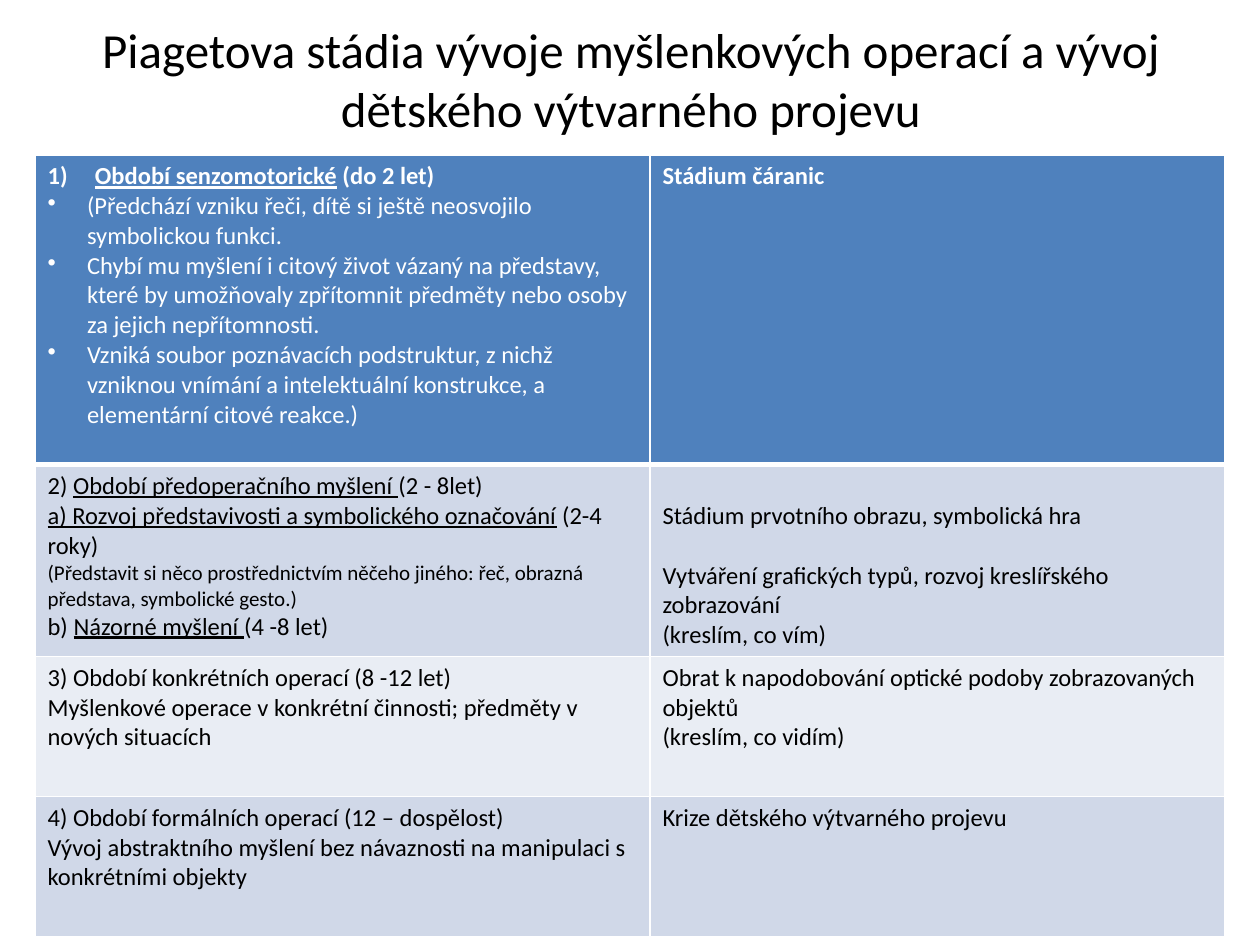
from lxml import etree
from pptx import Presentation
from pptx.dml.color import RGBColor
from pptx.enum.text import MSO_ANCHOR, PP_ALIGN
from pptx.oxml.ns import qn
from pptx.util import Pt

HUES = {"head": "4F81BD", "dark": "D0D8E8", "light": "E9EDF4", "white": "FFFFFF", "black": "000000"}
BASE = {"name": "Calibri", "size": Pt(14), "bold": False, "underline": False}
BOLD = {"bold": True}
LINE = {"underline": True}
BOTH = {**BOLD, **LINE}
SMALL = {"size": Pt(12)}
WIDTHS = [351.4, 328.6]
BULLETS = {
    "number": (27, "buAutoNum", {"type": "arabicParenR"}),
    "dot": (22.5, "buChar", {"char": "•"}),
}

ROWS = [
    (177, "head", "white", [
        [
            ("number", [("Období senzomotorické", BOTH), (" (do 2 let)", BOLD)]),
            ("dot", [("(Předchází vzniku řeči, dítě si ještě neosvojilo symbolickou funkci.", {})]),
            ("dot", [("Chybí mu myšlení i citový život vázaný na představy, které by umožňovaly "
                      "zpřítomnit předměty nebo osoby za jejich nepřítomnosti.", {})]),
            ("dot", [("Vzniká soubor poznávacích podstruktur, z nichž vzniknou vnímání a "
                      "intelektuální konstrukce, a elementární citové reakce.)", {})]),
        ],
        [(None, [("Stádium čáranic", BOLD)])],
    ]),
    (109.7, "dark", "black", [
        [
            (None, [("2) ", {}), ("Období předoperačního myšlení ", LINE), ("(2 - 8let)", {})]),
            (None, [("a) Rozvoj představivosti a symbolického označování", LINE), (" (2-4 roky)", {})]),
            (None, [("(Představit si něco prostřednictvím něčeho jiného: řeč, obrazná představa, "
                     "symbolické gesto.)", SMALL)]),
            (None, [("b) ", {}), ("Názorné myšlení ", LINE), ("(4 -8 let)", {})]),
        ],
        [
            (None, [("Stádium prvotního obrazu, symbolická hra", {})]),
            ("gap", [("Vytváření grafických typů, rozvoj kreslířského zobrazování", {})]),
            (None, [("(kreslím, co vím)", {})]),
        ],
    ]),
    (80, "light", "black", [
        [
            (None, [("3) Období konkrétních operací (8 -12 let)", {})]),
            (None, [("Myšlenkové operace v konkrétní činnosti; předměty v nových situacích", {})]),
        ],
        [
            (None, [("Obrat k napodobování optické podoby zobrazovaných objektů", {})]),
            (None, [("(kreslím, co vidím)", {})]),
        ],
    ]),
    (80, "dark", "black", [
        [
            (None, [("4) Období formálních operací (12 – dospělost)", {})]),
            (None, [("Vývoj abstraktního myšlení bez návaznosti na manipulaci s konkrétními objekty", {})]),
        ],
        [(None, [("Krize dětského výtvarného projevu", {})])],
    ]),
]


def add_run(para, text, form, hue):
    run = para.add_run()
    run.text = text
    for key, value in {**BASE, **form}.items():
        setattr(run.font, key, value)
    run.font.color.rgb = RGBColor.from_string(HUES[hue])


def add_edge(cell, side, width):
    edge = etree.SubElement(cell._tc.get_or_add_tcPr(), qn(f"a:ln{side}"), w=str(Pt(width)))
    fill = etree.SubElement(edge, qn("a:solidFill"))
    etree.SubElement(fill, qn("a:srgbClr"), val=HUES["white"])


deck = Presentation()
deck.slide_width, deck.slide_height = Pt(720), Pt(540)
slide = deck.slides.add_slide(deck.slide_layouts[5])

title = slide.shapes.title
for key, value in {"left": 36.5, "top": 0, "width": 648, "height": 89.5}.items():
    setattr(title, key, Pt(value))
title.text_frame.word_wrap = True
title.text_frame.vertical_anchor = MSO_ANCHOR.MIDDLE
para = title.text_frame.paragraphs[0]
para.alignment = PP_ALIGN.CENTER
add_run(para, "Piagetova stádia vývoje myšlenkových operací a vývoj dětského výtvarného projevu",
        {"size": Pt(28)}, "black")

total = sum(row[0] for row in ROWS)
table = slide.shapes.add_table(len(ROWS), len(WIDTHS), Pt(20), Pt(88.6), Pt(sum(WIDTHS)), Pt(total)).table
table.first_row = table.horz_banding = False
for col, width in zip(table.columns, WIDTHS):
    col.width = Pt(width)

for r, (height, back, ink, cells) in enumerate(ROWS):
    table.rows[r].height = Pt(height)
    for c, paras in enumerate(cells):
        cell = table.cell(r, c)
        for side, width in {"L": 1, "R": 1, "T": 3 if r == 1 else 1, "B": 3 if r == 0 else 1}.items():
            add_edge(cell, side, width)
        cell.fill.solid()
        cell.fill.fore_color.rgb = RGBColor.from_string(HUES[back])
        cell.vertical_anchor = MSO_ANCHOR.TOP
        frame = cell.text_frame
        for n, (kind, runs) in enumerate(paras):
            para = frame.add_paragraph() if n else frame.paragraphs[0]
            if kind in BULLETS:
                indent, tag, marks = BULLETS[kind]
                props = para._p.get_or_add_pPr()
                props.set("marL", str(Pt(indent)))
                props.set("indent", str(-Pt(indent)))
                etree.SubElement(props, qn(f"a:{tag}"), marks)
            elif kind == "gap":
                para.space_before = Pt(17.1)
            for text, form in runs:
                add_run(para, text, form, ink)

table.cell(1, 1).margin_top = Pt(20.7)

deck.save("out.pptx")
